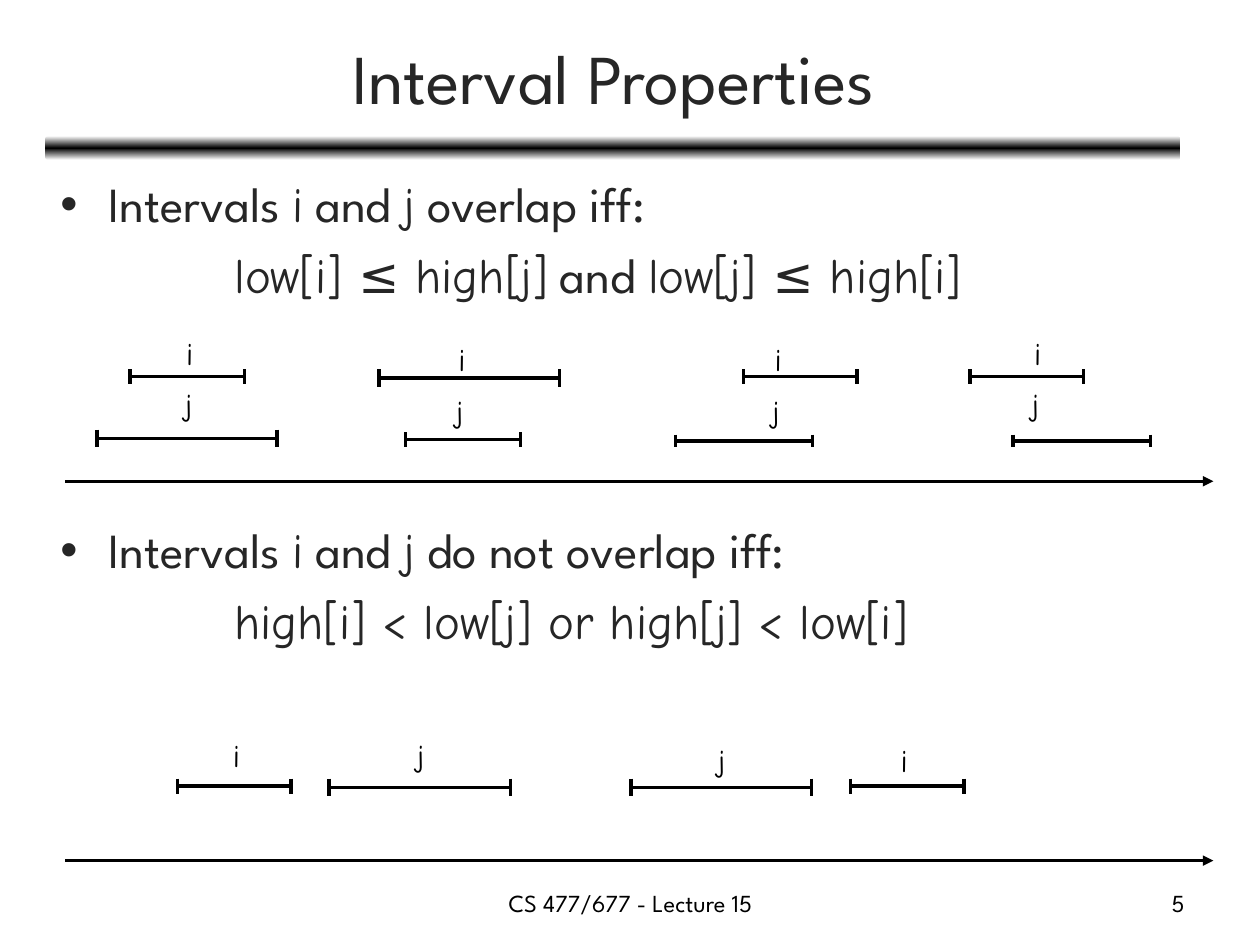
from copy import deepcopy

from lxml.etree import SubElement
from pptx import Presentation
from pptx.dml.color import RGBColor
from pptx.enum.shapes import MSO_CONNECTOR as Conn, MSO_SHAPE as Shape
from pptx.enum.text import MSO_ANCHOR as Anchor, MSO_AUTO_SIZE as Auto, PP_ALIGN as Align
from pptx.oxml.ns import qn
from pptx.util import Inches, Pt

SANS, HAND = "League Spartan", "Comic Neue"
INK, BLACK, WHITE = "262626", "000000", "FFFFFF"


def color(hex_string):
    return RGBColor.from_string(hex_string)


def apply(target, values):
    for name, value in values.items():
        setattr(target, name, value)


def place(sp, box):
    apply(sp, dict(zip(("left", "top", "width", "height"), map(Inches, box))))


class Deck:
    line_width = Pt(2)

    def __init__(self):
        self.prs = Presentation()
        apply(self.prs, {"slide_width": Inches(10), "slide_height": Inches(7.5)})
        self.s = self.prs.slides.add_slide(self.prs.slide_layouts[1])

    def run(self, p, text, font, size, ink):
        r = p.add_run()
        r.text = text
        apply(r.font, {"name": font, "size": Pt(size)})
        r.font.color.rgb = color(ink)

    def title(self, text, box):
        sp = self.s.shapes.title
        place(sp, box)
        apply(sp.text_frame, {"auto_size": Auto.NONE, "vertical_anchor": Anchor.MIDDLE})
        p = sp.text_frame.paragraphs[0]
        p.alignment = Align.CENTER
        self.run(p, text, SANS, 40, INK)

    def body(self, items, box):
        sp = self.s.placeholders[1]
        place(sp, box)
        tf = sp.text_frame
        tf.auto_size = Auto.NONE
        for n, (bullet, before, runs) in enumerate(items):
            p = tf.add_paragraph() if n else tf.paragraphs[0]
            p.space_before = Pt(before)
            pPr = p._p.get_or_add_pPr()
            pPr.set("marL", str(Inches(0.38 if bullet else 1.38)))
            pPr.set("indent", str(Inches(-0.38 if bullet else 0)))
            if bullet:
                SubElement(pPr, qn("a:buChar"), char="•")
            else:
                SubElement(pPr, qn("a:buNone"))
            for text, font in runs:
                self.run(p, text, font, 28, INK)

    def text(self, text, box, font=SANS, size=14, align=Align.LEFT, wrap=True):
        sp = self.s.shapes.add_textbox(*map(Inches, box))
        tf = sp.text_frame
        apply(tf, {"word_wrap": wrap, "auto_size": Auto.NONE if wrap else Auto.SHAPE_TO_FIT_TEXT})
        tf.paragraphs[0].alignment = align
        self.run(tf.paragraphs[0], text, font, size, BLACK)

    def line(self, x1, y1, x2, y2, arrow=False):
        c = self.s.shapes.add_connector(Conn.STRAIGHT, *map(Inches, (x1, y1, x2, y2)))
        c.line.width = self.line_width
        c.line.color.rgb = color(BLACK)
        if arrow:
            SubElement(c.line._get_or_add_ln(), qn("a:tailEnd"), type="triangle")
        SubElement(c._element.spPr, qn("a:effectLst"))

    def interval(self, name, x1, x2, y, tick, label_x, label_y):
        self.line(x1, y, x2, y)
        for x in (x1, x2):
            self.line(x, y - tick, x, y + tick)
        width = 0.27 if name == "i" else 0.3
        self.text(name, (label_x, label_y, width, 0.4), HAND, 18, wrap=False)

    def bar(self, box):
        sp = self.s.shapes.add_shape(Shape.ROUNDED_RECTANGLE, *map(Inches, box))
        sp.shadow.inherit = False
        sp.line.fill.background()
        sp.fill.gradient()
        sp.fill.gradient_angle = 90
        first = sp.fill.gradient_stops[0]._gs
        first.addnext(deepcopy(first))
        stops = zip(sp.fill.gradient_stops, (0, 0.5, 1), (WHITE, BLACK, WHITE))
        for stop, position, ink in stops:
            stop.position = position
            stop.color.rgb = color(ink)


def heading(ending):
    return [("Intervals ", SANS), ("i", HAND), (" and ", SANS), ("j", HAND), (ending, SANS)]


OVERLAP = [("low[i] ≤ high[j]", HAND), (" and ", SANS), ("low[j] ≤ high[i]", HAND)]
DISJOINT = [("high[i] < low[j] or high[j] < low[i]", HAND)]

INTERVALS = [
    ("i", 1.03, 1.94, 2.99, 0.06, 1.38, 2.6),
    ("j", 0.77, 2.2, 3.48, 0.07, 1.37, 3.01),
    ("i", 3.01, 4.44, 3, 0.07, 3.54, 2.65),
    ("j", 3.22, 4.13, 3.49, 0.06, 3.52, 3.06),
    ("i", 5.9, 6.8, 2.99, 0.06, 6.05, 2.65),
    ("j", 5.36, 6.45, 3.5, 0.05, 6.03, 3.06),
    ("i", 7.7, 8.6, 2.99, 0.06, 8.11, 2.6),
    ("j", 8.04, 9.13, 3.5, 0.05, 8.09, 3.01),
    ("i", 1.41, 2.31, 6.24, 0.06, 1.75, 5.79),
    ("j", 2.61, 4.05, 6.25, 0.07, 3.21, 5.79),
    ("j", 5.01, 6.44, 6.25, 0.07, 5.6, 5.83),
    ("i", 6.75, 7.65, 6.24, 0.06, 7.05, 5.83),
]


def main():
    deck = Deck()
    deck.bar((0.36, 1.08, 9.01, 0.19))
    deck.title("Interval Properties", (0.37, 0.11, 9, 0.99))
    deck.body([
        (True, 6.5, heading(" overlap iff:")),
        (False, 6.5, OVERLAP),
        (True, 124, heading(" do not overlap iff:")),
        (False, 6.5, DISJOINT),
    ], (0.38, 1.33, 9, 5.55))
    for interval in INTERVALS:
        deck.interval(*interval)
    for y in (3.82, 6.83):
        deck.line(0.52, y, 9.63, y, arrow=True)
    deck.text("CS 477/677 - Lecture 15", (3.42, 7, 3.17, 0.35), align=Align.CENTER)
    deck.text("5", (7.17, 7, 2.33, 0.35), align=Align.RIGHT)
    deck.prs.save("out.pptx")


if __name__ == "__main__":
    main()
